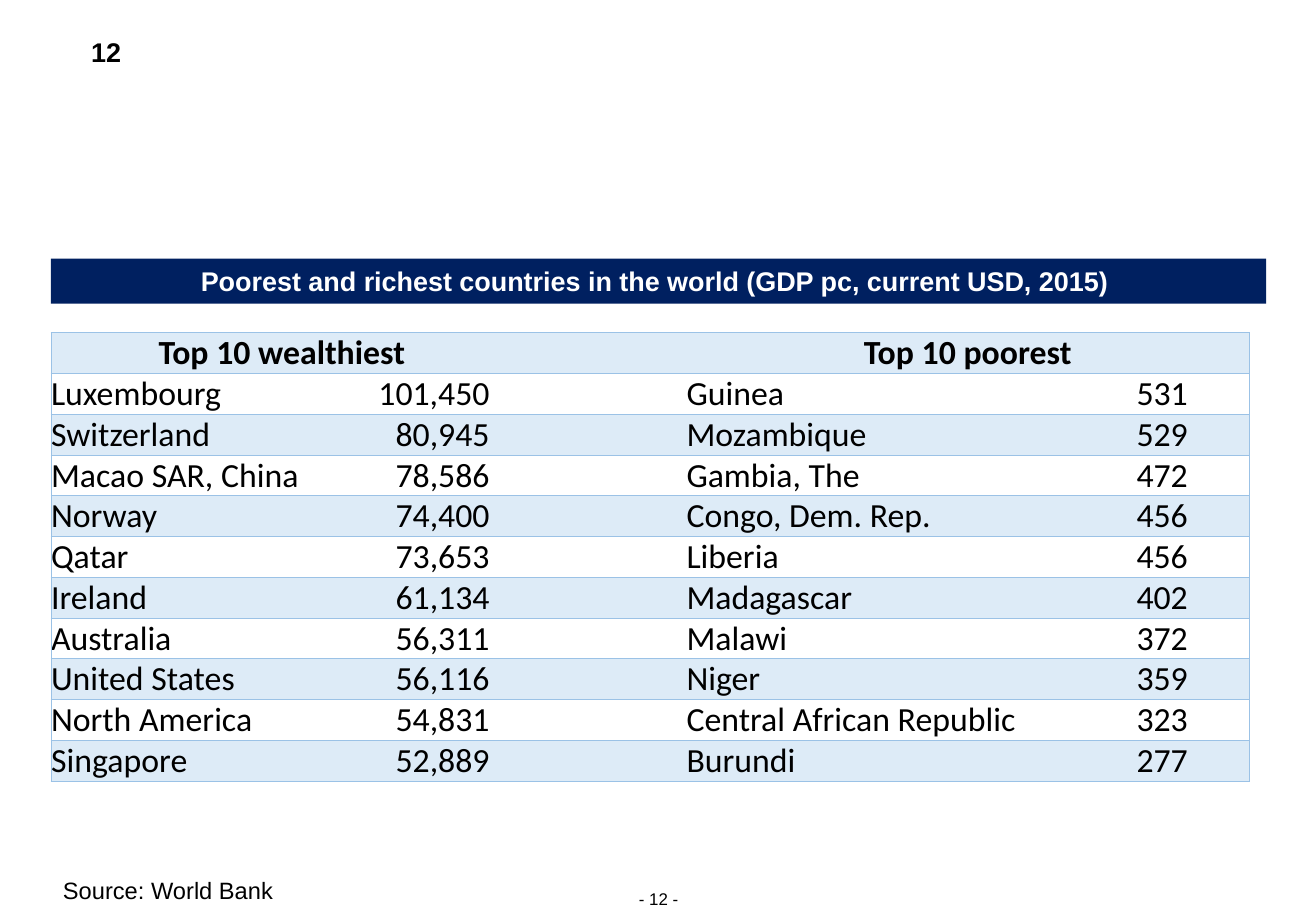
import pptx
import pptx.util
import pptx.dml.color
import pptx.enum.shapes
import pptx.enum.text
import pptx.oxml

Inches = pptx.util.Inches
Pt = pptx.util.Pt
Align = pptx.enum.text.PP_ALIGN
Anchor = pptx.enum.text.MSO_ANCHOR
RGB = pptx.dml.color.RGBColor.from_string

theme = {
    "navy": "002060", "band": "DDEBF7", "rule": "9BC2E6",
    "ink": "000000", "white": "FFFFFF",
    "sans": "Arial", "body": "Calibri",
    "head": 16, "cell": 20, "note": 14, "foot": 10,
}


def write(frame, text, size, font="sans", color="ink", bold=False, align=Align.LEFT):
    frame.text = text
    par = frame.paragraphs[0]
    par.alignment = align
    for run in par.runs:
        run.font.name = theme[font]
        run.font.size = Pt(theme[size])
        run.font.bold = bold
        run.font.color.rgb = RGB(theme[color])


def edge(cell, side, shown):
    """Draw one cell border, or clear it when it is not shown."""
    fill = f'<a:solidFill><a:srgbClr val="{theme["rule"]}"/></a:solidFill>' if shown else "<a:noFill/>"
    cell._tc.get_or_add_tcPr().append(pptx.oxml.parse_xml(
        f'<a:ln{side} xmlns:a="http://schemas.openxmlformats.org/drawingml/2006/main"'
        f' w="{Pt(0.5)}">{fill}</a:ln{side}>'))


deck = pptx.Presentation()
deck.slide_width = Inches(10.83)
deck.slide_height = Inches(7.5)
slide = deck.slides.add_slide(deck.slide_layouts[6])
shapes = slide.shapes

# Page numbers and source
labels = [
    ("- 12 -", (4.85, 7.32, 1.14, 0.17), "foot", False, Align.CENTER, 0, 0),
    ("12", (0.75, 0.29, 0.3, 0.27), "head", True, Align.LEFT, 0, 0),
    ("Source: World Bank", (0.42, 7.16, 1.94, 0.34), "note", False, Align.LEFT, 0.1, 0.05),
]
for text, place, size, bold, align, side, top in labels:
    frame = shapes.add_textbox(*map(Inches, place)).text_frame
    frame.margin_left = frame.margin_right = Inches(side)
    frame.margin_top = frame.margin_bottom = Inches(top)
    write(frame, text, size, bold=bold, align=align)

# Title banner
banner = shapes.add_shape(pptx.enum.shapes.MSO_SHAPE.RECTANGLE,
                          Inches(0.42), Inches(2.13), Inches(10), Inches(0.37))
banner.shadow.inherit = False
banner.fill.solid()
banner.fill.fore_color.rgb = RGB(theme["navy"])
banner.line.fill.background()
banner.text_frame.word_wrap = True
write(banner.text_frame, "Poorest and richest countries in the world (GDP pc, current USD, 2015) ",
      "head", color="white", bold=True, align=Align.CENTER)

# Country table
rows = [
    ("Top 10 wealthiest", "", "", "Top 10 poorest", ""),
    ("Luxembourg", "101,450", "", "Guinea", "531"),
    ("Switzerland", "80,945", "", "Mozambique", "529"),
    ("Macao SAR, China", "78,586", "", "Gambia, The", "472"),
    ("Norway", "74,400", "", "Congo, Dem. Rep.", "456"),
    ("Qatar", "73,653", "", "Liberia", "456"),
    ("Ireland", "61,134", "", "Madagascar", "402"),
    ("Australia", "56,311", "", "Malawi", "372"),
    ("United States", "56,116", "", "Niger", "359"),
    ("North America", "54,831", "", "Central African Republic", "323"),
    ("Singapore", "52,889", "", "Burundi", "277"),
]
widths = [2.46, 1.34, 1.43, 3.2, 1.43]
aligns = [Align.LEFT, Align.RIGHT, Align.LEFT, Align.LEFT, Align.CENTER]
last = len(widths) - 1
table = shapes.add_table(len(rows), len(widths), Inches(0.42), Inches(2.74),
                         Inches(sum(widths)), Inches(3.69)).table
table.first_row = table.horz_banding = False
for col, width in zip(table.columns, widths):
    col.width = Inches(width)
for left in (0, 3):
    table.cell(0, left).merge(table.cell(0, left + 1))

for r, row in enumerate(rows):
    for c, text in enumerate(row):
        cell = table.cell(r, c)
        cell.margin_left = cell.margin_right = cell.margin_top = cell.margin_bottom = 0
        cell.vertical_anchor = Anchor.BOTTOM
        if r and c == 1:
            cell.margin_right = Inches(0.19)
        for side, shown in (("L", c == 0), ("R", c == last or (r == 0 and c == 3)),
                            ("T", True), ("B", True)):
            edge(cell, side, shown)
        if r % 2:
            cell.fill.background()
        else:
            cell.fill.solid()
            cell.fill.fore_color.rgb = RGB(theme["band"])
        if text:
            write(cell.text_frame, text, "cell", font="body", bold=r == 0,
                  align=aligns[c] if r else Align.CENTER)

deck.save("out.pptx")
